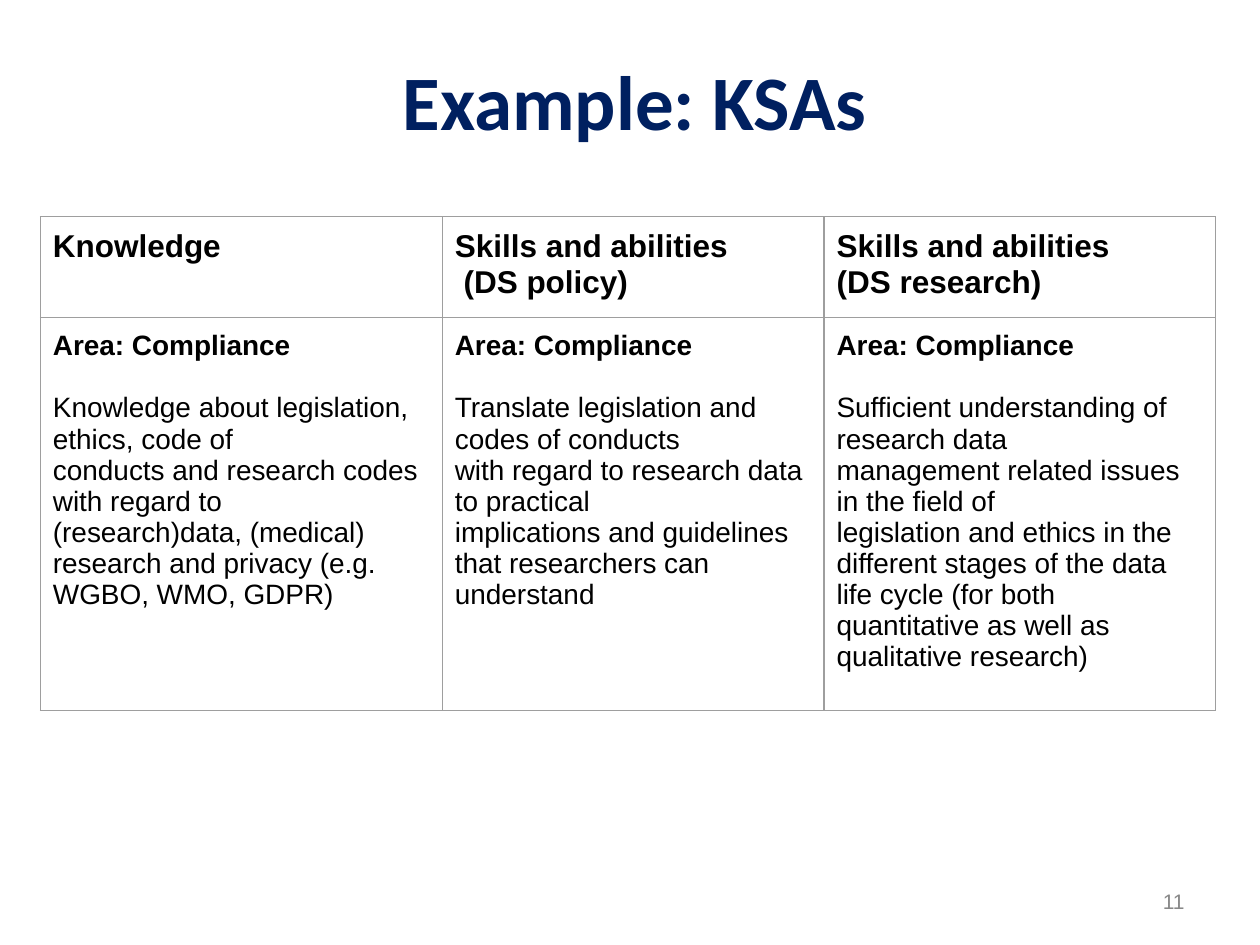
from lxml.etree import SubElement
from pptx import Presentation
from pptx.dml.color import RGBColor
from pptx.enum.text import MSO_ANCHOR, PP_ALIGN
from pptx.oxml.ns import qn
from pptx.util import Inches, Pt

COLORS = {"title": "002060", "text": "000000", "number": "888888", "border": "9E9E9E"}

HEADERS = [
    ["Knowledge"],
    ["Skills and abilities", " (DS policy)"],
    ["Skills and abilities", "(DS research)"],
]
AREA = "Area: Compliance"
DETAILS = [
    ["Knowledge about legislation, ethics, code of",
     "conducts and research codes with regard to",
     "(research)data, (medical) research and privacy (e.g. WGBO, WMO, GDPR)"],
    ["Translate legislation and codes of conducts",
     "with regard to research data to practical",
     "implications and guidelines that researchers can understand"],
    ["Sufficient understanding of research data",
     "management related issues in the field of",
     "legislation and ethics in the different stages of the data life cycle "
     "(for both quantitative as well as qualitative research)"],
]


def add_run(p, text, size, color="text", font="Arial", bold=False):
    r = p.add_run()
    r.text = text
    r.font.name = font
    r.font.size = Pt(size)
    r.font.bold = bold
    r.font.color.rgb = RGBColor.from_string(COLORS[color])


def add_text(s, box, align, text, size, color, **style):
    tf = s.shapes.add_textbox(*map(Inches, box)).text_frame
    tf.word_wrap = True
    tf.vertical_anchor = MSO_ANCHOR.MIDDLE
    p = tf.paragraphs[0]
    p.alignment = align
    add_run(p, text, size, color, **style)


def add_title(s, box):
    add_text(s, box, PP_ALIGN.CENTER, "Example: KSAs", 44, "title",
             font="Calibri", bold=True)


def add_page_number(s, box):
    add_text(s, box, PP_ALIGN.RIGHT, "11", 12, "number")


def style_cell(cell):
    cell.margin_left = cell.margin_right = Inches(0.1)
    cell.margin_top = cell.margin_bottom = Inches(0.1)
    tcPr = cell._tc.get_or_add_tcPr()
    for side in ("a:lnL", "a:lnR", "a:lnT", "a:lnB"):
        ln = SubElement(tcPr, qn(side), w=str(Pt(0.75)))
        fill = SubElement(ln, qn("a:solidFill"))
        SubElement(fill, qn("a:srgbClr"), val=COLORS["border"])
    cell.fill.background()


def fill_header(cell, lines):
    p = cell.text_frame.paragraphs[0]
    for i, line in enumerate(lines):
        if i:
            p.add_line_break()
        add_run(p, line, 18, bold=True)


def fill_details(cell, lines):
    tf = cell.text_frame
    p = tf.paragraphs[0]
    p.space_after = Pt(18)
    add_run(p, AREA, 16, bold=True)
    for line in lines:
        add_run(tf.add_paragraph(), line, 16)


def add_ksa_table(s, box, col_widths, row_heights):
    frame = s.shapes.add_table(len(row_heights), len(col_widths), *map(Inches, box))
    table = frame.table
    table.first_row = table.horz_banding = False
    for row, height in zip(table.rows, row_heights):
        row.height = Inches(height)
    for i, width in enumerate(col_widths):
        table.columns[i].width = Inches(width)
        header, details = table.cell(0, i), table.cell(1, i)
        style_cell(header)
        style_cell(details)
        fill_header(header, HEADERS[i])
        fill_details(details, DETAILS[i])


def main():
    prs = Presentation()
    prs.slide_width, prs.slide_height = Inches(10), Inches(7.5)
    s = prs.slides.add_slide(prs.slide_layouts[6])
    add_title(s, (0.67, 0.2, 8.74, 1.18))
    add_page_number(s, (7.17, 6.95, 2.33, 0.4))
    add_ksa_table(s, (0.32, 1.72, 9.33, 3.73), [3.19, 3.03, 3.11], [0.76, 2.97])
    prs.save("out.pptx")


if __name__ == "__main__":
    main()
